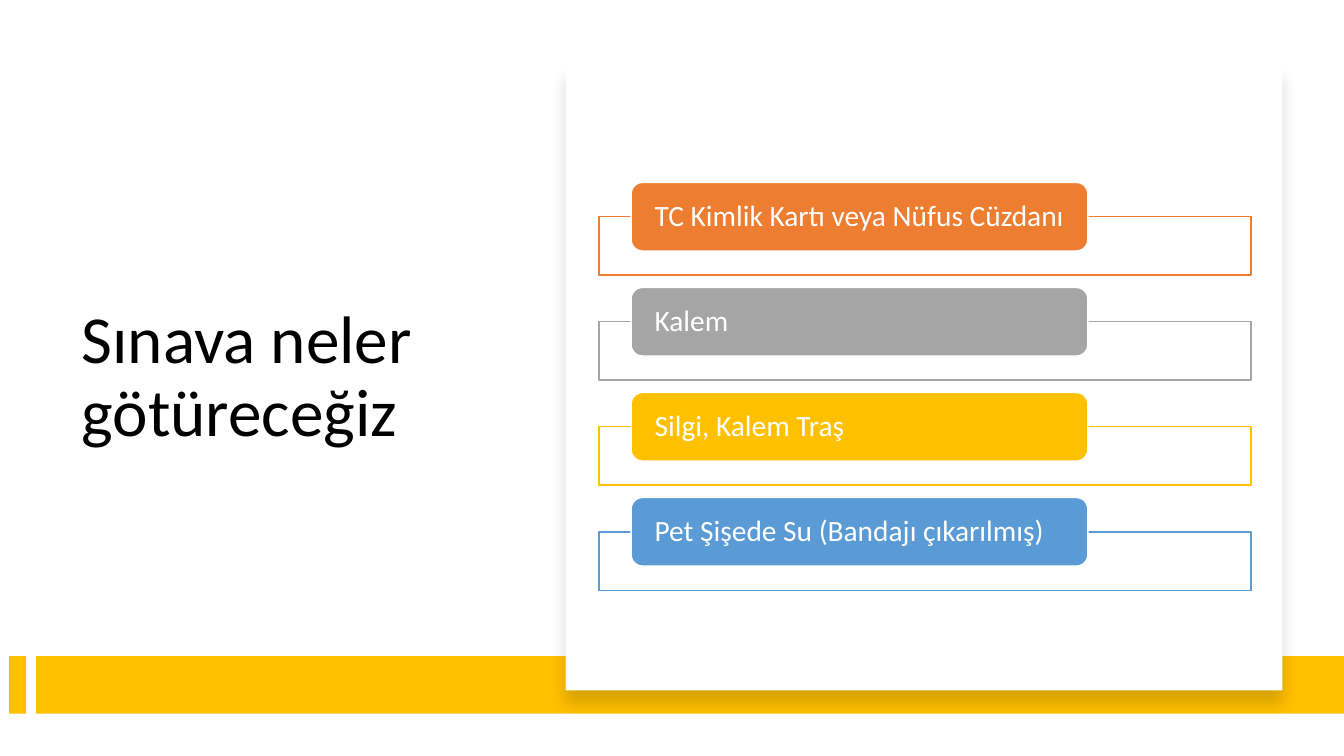
from lxml import etree
from pptx import Presentation
from pptx.dml.color import RGBColor
from pptx.enum.shapes import MSO_SHAPE
from pptx.enum.text import MSO_ANCHOR, PP_ALIGN
from pptx.oxml import parse_xml
from pptx.oxml.ns import qn
from pptx.util import Inches, Pt

RECT = MSO_SHAPE.RECTANGLE
ROUND = MSO_SHAPE.ROUNDED_RECTANGLE
MIDDLE = MSO_ANCHOR.MIDDLE
LEFT = PP_ALIGN.LEFT

BLACK = RGBColor(0x00, 0x00, 0x00)
WHITE = RGBColor(0xFF, 0xFF, 0xFF)
ORANGE = RGBColor(0xED, 0x7D, 0x31)
GRAY = RGBColor(0xA5, 0xA5, 0xA5)
GOLD = RGBColor(0xFF, 0xC0, 0x00)
BLUE = RGBColor(0x5B, 0x9B, 0xD5)

SHADOW = (
    '<a:effectLst xmlns:a="http://schemas.openxmlformats.org/drawingml/2006/main">'
    '<a:outerShdw blurRad="139700" dist="127000" dir="5400000" algn="t" rotWithShape="0">'
    '<a:srgbClr val="000000"><a:alpha val="15000"/></a:srgbClr>'
    '</a:outerShdw></a:effectLst>'
)

deck = Presentation()
deck.slide_width = Inches(13.33)
deck.slide_height = Inches(7.5)
slide = deck.slides.add_slide(deck.slide_layouts[6])


def add_box(kind, x, y, w, h, fill, line=None):
    box = slide.shapes.add_shape(kind, Inches(x), Inches(y), Inches(w), Inches(h))
    box.shadow.inherit = False
    box.fill.solid()
    box.fill.fore_color.rgb = fill
    if line is None:
        box.line.fill.background()
    else:
        box.line.color.rgb = line
        box.line.width = Pt(1)
    return box


def set_text(frame, text, size, color):
    frame.word_wrap = True
    frame.vertical_anchor = MIDDLE
    para = frame.paragraphs[0]
    para.text = text
    para.alignment = LEFT
    para.line_spacing = 0.9
    para.font.name = "Calibri"
    para.font.size = Pt(size)
    para.font.color.rgb = color


title = slide.shapes.add_textbox(Inches(0.71), Inches(1.2), Inches(4.15), Inches(5.1))
set_text(title.text_frame, "Sınava neler götüreceğiz", 48, BLACK)

for x, w in [(0.09, 0.17), (0.36, 12.97)]:
    add_box(RECT, x, 6.51, w, 0.57, GOLD)

card = add_box(RECT, 5.61, 0.64, 7.11, 6.21, WHITE)
props = card._element.spPr
props.remove(props.find(qn("a:effectLst")))
props.append(parse_xml(SHADOW))

items = [
    ("TC Kimlik Kartı veya Nüfus Cüzdanı", ORANGE),
    ("Kalem", GRAY),
    ("Silgi, Kalem Traş", GOLD),
    ("Pet Şişede Su (Bandajı çıkarılmış)", BLUE),
]
for row, (text, color) in enumerate(items):
    top = 1.81 + row * 1.042
    frame = add_box(RECT, 5.94, top + 0.34, 6.47, 0.58, WHITE, color)
    tint = frame._element.spPr.find(qn("a:solidFill"))[0]
    etree.SubElement(tint, qn("a:alpha")).set("val", "90000")

    pill = add_box(ROUND, 6.26, top, 4.53, 0.68, color, WHITE)
    label = pill.text_frame
    label.margin_left = label.margin_right = Inches(0.2)
    label.margin_top = label.margin_bottom = 0
    set_text(label, text, 21, WHITE)

deck.save("out.pptx")
